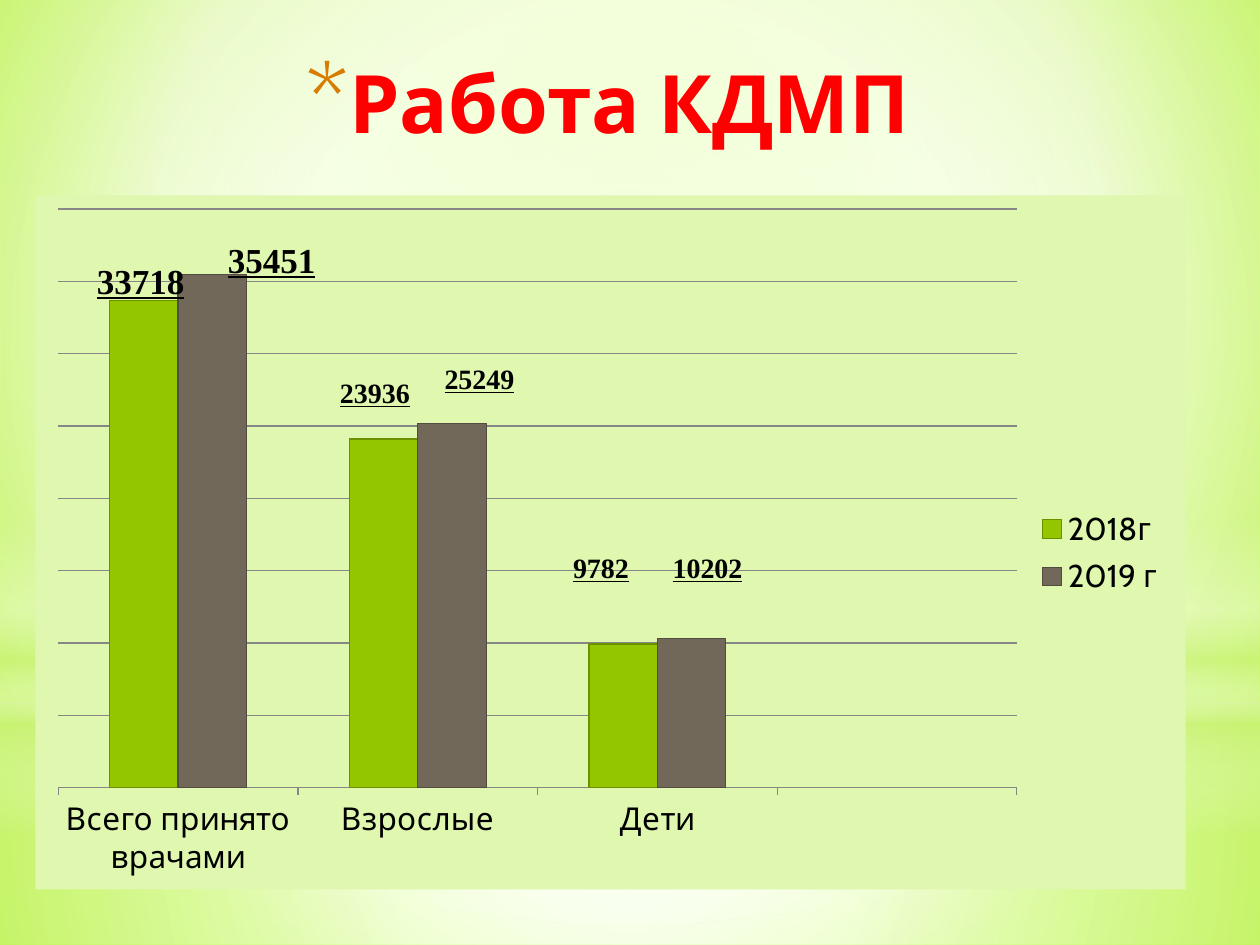
from lxml.etree import SubElement
from pptx import Presentation
from pptx.chart.data import CategoryChartData
from pptx.dml.color import RGBColor
from pptx.enum.chart import XL_CHART_TYPE, XL_LEGEND_POSITION, XL_TICK_LABEL_POSITION, XL_TICK_MARK
from pptx.enum.shapes import MSO_SHAPE
from pptx.enum.text import MSO_ANCHOR, MSO_AUTO_SIZE, PP_ALIGN
from pptx.oxml import parse_xml
from pptx.oxml.ns import nsdecls, qn
from pptx.util import Inches, Pt

RED = RGBColor(0xFF, 0x00, 0x00)
BLACK = RGBColor(0x00, 0x00, 0x00)
GREY = RGBColor(0x86, 0x86, 0x86)
ORANGE = RGBColor(0xD7, 0x7C, 0x01)
PALE_GREEN = RGBColor(0xDF, 0xF7, 0xAE)
WHITE = RGBColor(0xFF, 0xFF, 0xFF)
LIME = RGBColor(0xCA, 0xF2, 0x78)
BACKDROP_STOPS = [(0, RGBColor(0xCA, 0xFF, 0x60), 100), (60, RGBColor(0xF7, 0xFF, 0xE7), 100),
                  (100, RGBColor(0xB7, 0xFF, 0x29), 100)]

CATEGORIES = ["Всего принято врачами", "Взрослые", "Дети", ""]
# name, values as percent of the highest column, fill, outline
SERIES = [
    ("2018г", (95, 68, 28, None), RGBColor(0x94, 0xC6, 0x00), RGBColor(0x6B, 0x91, 0x00)),
    ("2019 г", (100, 71, 29, None), RGBColor(0x71, 0x68, 0x5A), RGBColor(0x52, 0x4B, 0x41)),
]
GRID_STEP = 14.1
GRID_STEPS = 8
# text, left, top, width, size
VALUE_LABELS = [
    ("25249", 3.43, 2.82, 1.26, 16),
    ("35451", 1.71, 1.84, 1.43, 20),
    ("23936", 2.6, 2.93, 1.26, 16),
    ("10202", 5.24, 4.32, 1.26, 16),
    ("9782", 4.45, 4.32, 1.26, 16),
    ("33718", 0.67, 2.01, 1.43, 20),
]


def gradient(stops, focus=None):
    """Gradient of (position, colour, opacity) stops: circular around focus, else vertical."""
    marks = "".join(
        f'<a:gs pos="{position * 1000}"><a:srgbClr val="{color}">'
        f'<a:alpha val="{opacity * 1000}"/></a:srgbClr></a:gs>'
        for position, color, opacity in stops)
    if focus:
        sides = " ".join(f'{side}="{share * 1000}"' for side, share in zip("ltrb", focus))
        direction = f'<a:path path="circle"><a:fillToRect {sides}/></a:path>'
    else:
        direction = '<a:lin ang="5400000" scaled="0"/>'
    return parse_xml(f'<a:gradFill {nsdecls("a")} rotWithShape="1">'
                     f'<a:gsLst>{marks}</a:gsLst>{direction}</a:gradFill>')


def replace_gradient(fill, holder, new_gradient):
    fill.gradient()
    old = holder.find(".//" + qn("a:gradFill"))
    old.getparent().replace(old, new_gradient)


def add_backdrop(page, master, width, height):
    """Paint the page and lay the soft light shapes on the master."""
    replace_gradient(page.background.fill, page.element.cSld, gradient(BACKDROP_STOPS, (20, 10, 20, 60)))
    center = (50, 50, 50, 50)
    glows = [
        (MSO_SHAPE.RECTANGLE, 0.744, 0.256,
         [(0, WHITE, 91), (37, WHITE, 76), (100, LIME, 79)], center),
        (MSO_SHAPE.RECTANGLE, 0, 0.744,
         [(0, WHITE, 89), (48, WHITE, 62), (100, LIME, 79)], center),
        (MSO_SHAPE.RECTANGLE, 0.549, 0.333,
         [(0, WHITE, 0), (29, WHITE, 30), (45, LIME, 40), (55, WHITE, 26),
          (65, LIME, 60), (100, WHITE, 0)], None),
        (MSO_SHAPE.OVAL, 0.233, 0.744, [(0, WHITE, 100), (56, WHITE, 0)], center),
    ]
    for kind, top, share, stops, focus in glows:
        glow = page.shapes.add_shape(kind, 0, int(height * top), width, int(height * share))
        glow.shadow.inherit = False
        glow.line.fill.background()
        replace_gradient(glow.fill, glow.element, gradient(stops, focus))
        master.shapes.element.append(glow.element)


def fill_title(title, left, top, width, height):
    title.left, title.top, title.width, title.height = map(Inches, (left, top, width, height))
    frame = title.text_frame
    frame.text = "Работа КДМП"
    frame.vertical_anchor = MSO_ANCHOR.TOP
    frame.margin_top = Inches(0.06)
    para = frame.paragraphs[0]
    para.alignment = PP_ALIGN.CENTER
    font = para.runs[0].font  # on the run, so that the bullet stays regular
    font.name, font.size, font.bold = "Cabin", Pt(46), True
    font.color.rgb = RED
    properties = para._p.get_or_add_pPr()
    properties.set("marL", str(Inches(0.35)))
    properties.set("indent", str(-Inches(0.35)))
    bullet = [
        parse_xml(f'<a:buClr {nsdecls("a")}><a:srgbClr val="{ORANGE}"/></a:buClr>'),
        parse_xml(f'<a:buSzPct {nsdecls("a")} val="128000"/>'),
        parse_xml(f'<a:buFont {nsdecls("a")} typeface="Cabin"/>'),
        parse_xml(f'<a:buChar {nsdecls("a")} char="*"/>'),
    ]
    for position, element in enumerate(bullet):
        properties.insert(position, element)


def set_layout(layout, **settings):
    """Fix the place of a chart part as shares of the chart."""
    manual = SubElement(layout, qn("c:manualLayout"))
    for name, value in settings.items():
        SubElement(manual, qn(f"c:{name}")).set("val", str(value))


def place_chart_parts(chart):
    plot_area = chart._chartSpace.chart.plotArea
    legend = chart.legend._element
    for part, position in ((plot_area, 0), (legend, 1)):
        for old in part.findall(qn("c:layout")):
            part.remove(old)
        part.insert(position, parse_xml(f'<c:layout {nsdecls("c")}/>'))
    edges = {"xMode": "edge", "yMode": "edge"}
    set_layout(plot_area.find(qn("c:layout")), layoutTarget="inner", **edges,
               x=0.02, y=0.02, w=5 / 6, h=5 / 6)
    set_layout(legend.find(qn("c:layout")), **edges, x=0.86, y=0.44, w=0.13, h=0.15)


def add_visits_chart(page, left, top, width, height):
    data = CategoryChartData()
    data.categories = CATEGORIES
    for name, values, *_ in SERIES:
        data.add_series(name, values)
    box = map(Inches, (left, top, width, height))
    chart = page.shapes.add_chart(XL_CHART_TYPE.COLUMN_CLUSTERED, *box, data).chart
    chart.has_title = False
    chart.font.name, chart.font.size = "Cabin", Pt(18)
    chart.font.color.rgb = BLACK
    chart.has_legend = True
    chart.legend.position = XL_LEGEND_POSITION.RIGHT
    chart.legend.include_in_layout = False

    plot = chart.plots[0]
    plot.gap_width, plot.overlap, plot.vary_by_categories = 150, 0, False
    for series, (*_, color, outline) in zip(plot.series, SERIES):
        series.format.fill.solid()
        series.format.fill.fore_color.rgb = color
        series.format.line.color.rgb = outline
        series.format.line.width = Pt(0.75)

    values = chart.value_axis
    values.minimum_scale, values.maximum_scale = 0, round(GRID_STEP * GRID_STEPS, 1)
    values.major_unit = GRID_STEP
    values.visible = False
    values.has_major_gridlines = True
    categories = chart.category_axis
    categories.major_tick_mark = XL_TICK_MARK.OUTSIDE
    categories.tick_label_position = XL_TICK_LABEL_POSITION.NEXT_TO_AXIS
    for line in (values.major_gridlines.format.line, categories.format.line):
        line.color.rgb = GREY
        line.width = Pt(0.75)

    place_chart_parts(chart)
    chart._chartSpace.chart.addnext(parse_xml(
        f'<c:spPr {nsdecls("c", "a")}><a:solidFill><a:srgbClr val="{PALE_GREEN}"/></a:solidFill>'
        '<a:ln><a:noFill/></a:ln></c:spPr>'))


def add_value_label(page, text, left, top, width, size):
    height = 0.37 if size == 16 else 0.44
    box = page.shapes.add_textbox(*map(Inches, (left, top, width, height)))
    frame = box.text_frame
    frame.word_wrap = True
    frame.auto_size = MSO_AUTO_SIZE.SHAPE_TO_FIT_TEXT
    frame.text = text
    font = frame.paragraphs[0].font
    font.name, font.size = "Times New Roman", Pt(size)
    font.bold = font.underline = True
    font.color.rgb = BLACK


def main():
    deck = Presentation()
    deck.slide_width, deck.slide_height = Inches(10), Inches(7.5)
    page = deck.slides.add_slide(deck.slide_layouts.get_by_name("Title Only"))
    add_backdrop(page, deck.slide_master, deck.slide_width, deck.slide_height)
    fill_title(page.shapes.title, 1.77, 0.36, 6.1, 1.25)
    add_visits_chart(page, 0.28, 1.55, 9.13, 5.51)
    for label in VALUE_LABELS:
        add_value_label(page, *label)
    deck.save("out.pptx")


if __name__ == "__main__":
    main()
